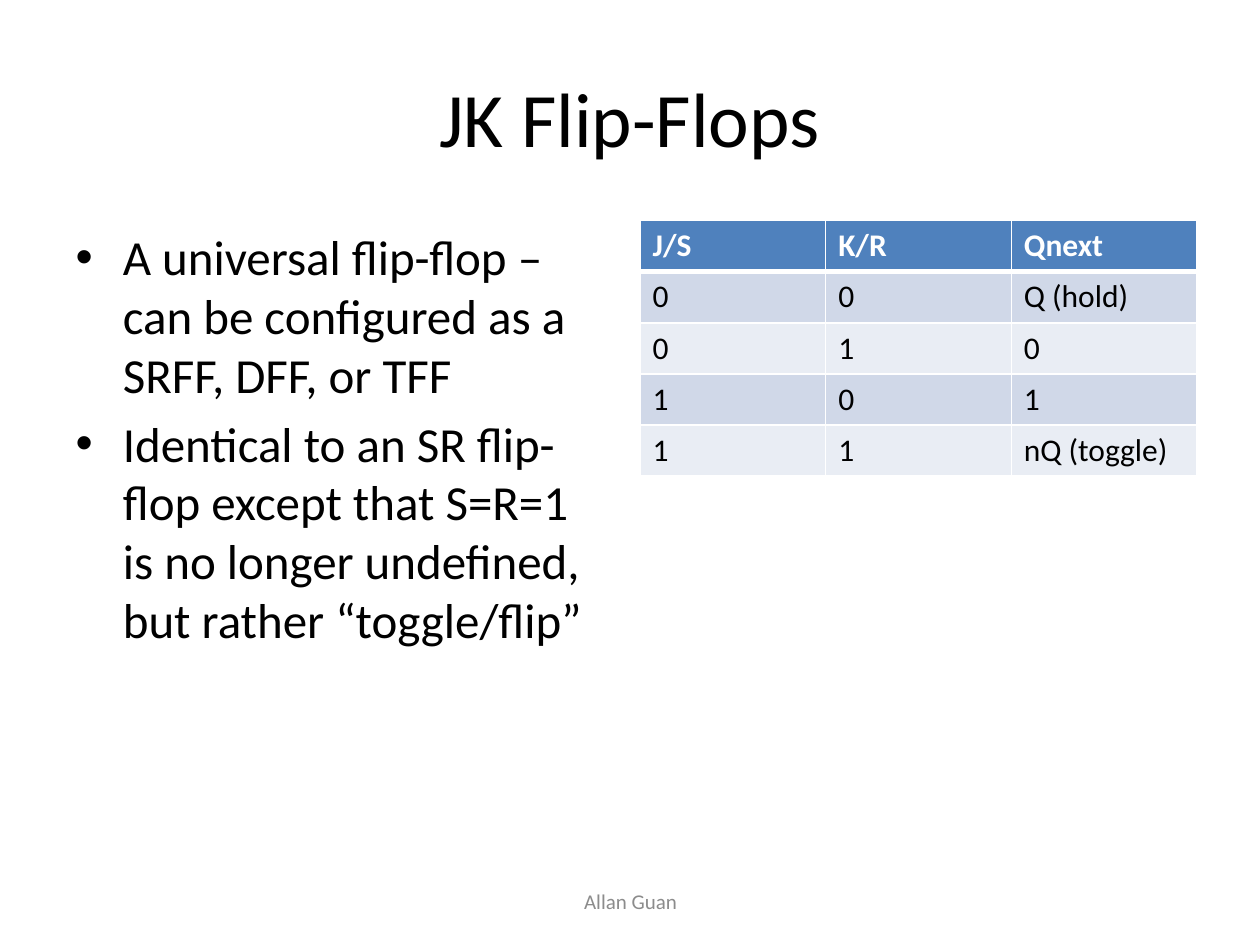
from lxml.etree import fromstring
from pptx import Presentation
from pptx.dml.color import RGBColor as RGB
from pptx.enum.text import MSO_ANCHOR as Anchor, PP_ALIGN as Align
from pptx.oxml.ns import nsdecls
from pptx.util import Inches, Pt

TITLE = "JK Flip-Flops"
POINTS = [
    "A universal flip-flop – can be configured as a SRFF, DFF, or TFF",
    "Identical to an SR flip-flop except that S=R=1 is no longer undefined, "
    "but rather “toggle/flip”",
]
ROWS = [
    ("J/S", "K/R", "Qnext"),
    ("0", "0", "Q (hold)"),
    ("0", "1", "0"),
    ("1", "0", "1"),
    ("1", "1", "nQ (toggle)"),
]
FOOTER = "Allan Guan"

COLORS = {"text": "000000", "white": "FFFFFF", "head": "4F81BD",
          "odd": "D0D8E8", "even": "E9EDF4", "foot": "8C8C8C"}
FORMATS = {
    "title": {"size": Pt(44), "color": "text"},
    "body": {"size": Pt(28), "color": "text"},
    "head": {"size": Pt(18), "color": "white", "bold": True},
    "cell": {"size": Pt(18), "color": "text", "bold": False},
    "foot": {"size": Pt(12), "color": "foot"},
}
BOXES = {
    "title": (0.5, 0.3, 9, 1.25),
    "body": (0.5, 1.75, 4.42, 4.95),
    "table": (5.08, 1.75, 4.42, 2.03),
    "foot": (3.42, 6.95, 3.17, 0.4),
}


def box(name):
    return [Inches(n) for n in BOXES[name]]


def place(shape, name):
    for key, value in zip(("left", "top", "width", "height"), box(name)):
        setattr(shape, key, value)


def write(frame, lines, name, align=None):
    frame.text = "\n".join(lines)
    for para in frame.paragraphs:
        para.alignment = align
        font = para.runs[0].font
        font.name = "Calibri"
        for key, value in FORMATS[name].items():
            if key == "color":
                font.color.rgb = RGB.from_string(COLORS[value])
            else:
                setattr(font, key, value)


def edge(cell, widths):
    """Draw white borders, given widths in points for sides L, R, T and B."""
    props = cell._tc.get_or_add_tcPr()
    for i, (side, width) in enumerate(zip("LRTB", widths)):
        props.insert(i, fromstring(
            f'<a:ln{side} {nsdecls("a")} w="{Pt(width)}"><a:solidFill>'
            f'<a:srgbClr val="{COLORS["white"]}"/></a:solidFill></a:ln{side}>'))


def add_table(slide):
    table = slide.shapes.add_table(
        len(ROWS), len(ROWS[0]), *box("table")).table
    for r, row in enumerate(ROWS):
        fill = "head" if r == 0 else "odd" if r % 2 else "even"
        for c, text in enumerate(row):
            cell = table.cell(r, c)
            write(cell.text_frame, [text], "cell" if r else "head")
            cell.fill.solid()
            cell.fill.fore_color.rgb = RGB.from_string(COLORS[fill])
            edge(cell, (1, 1, 3 if r == 1 else 1, 3 if r == 0 else 1))


def main():
    deck = Presentation()
    deck.slide_width, deck.slide_height = Inches(10), Inches(7.5)
    slide = deck.slides.add_slide(deck.slide_layouts[1])

    title, body = slide.placeholders
    place(title, "title")
    write(title.text_frame, [TITLE], "title", Align.CENTER)
    place(body, "body")
    write(body.text_frame, POINTS, "body")

    add_table(slide)

    foot = slide.shapes.add_textbox(*box("foot")).text_frame
    foot.word_wrap = True
    foot.vertical_anchor = Anchor.MIDDLE
    write(foot, [FOOTER], "foot", Align.CENTER)

    deck.save("out.pptx")


if __name__ == "__main__":
    main()
